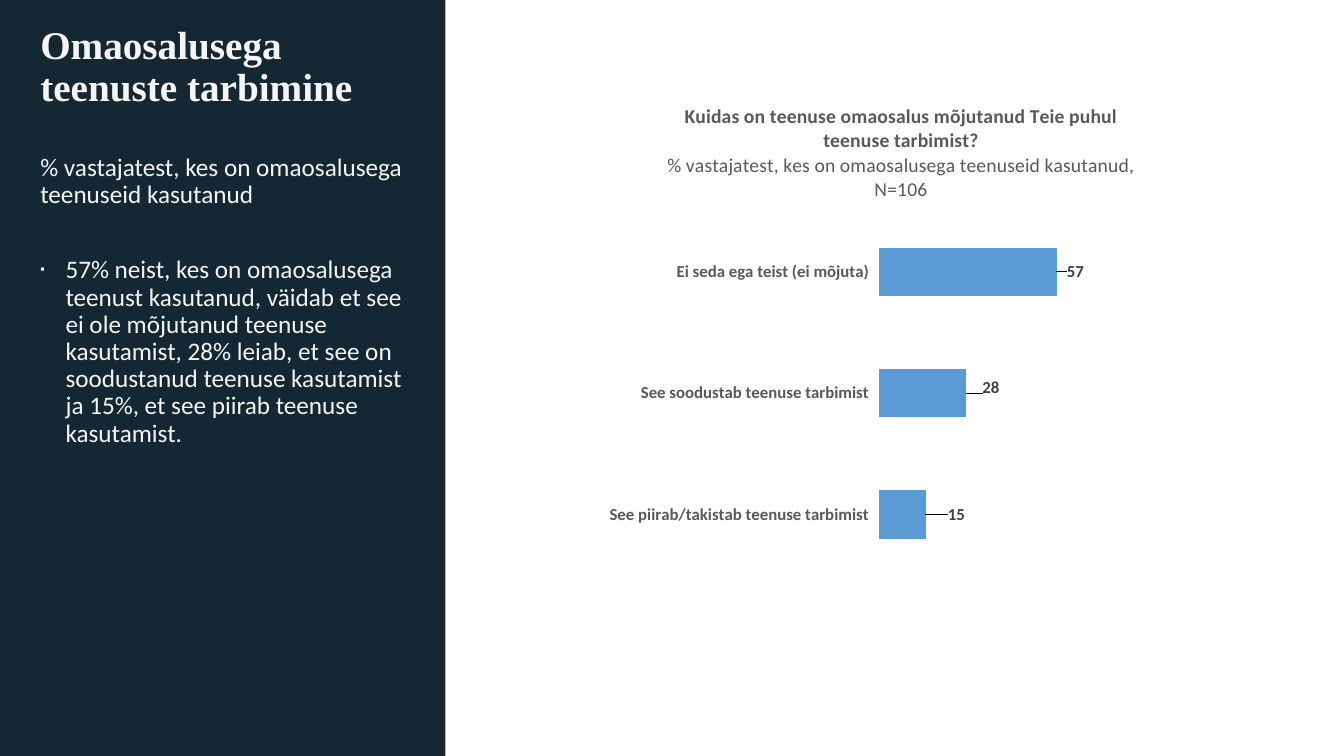
"""Build a slide on co-paid service use, with a text panel and a bar chart."""
import dataclasses
import typing

import lxml.etree
import pptx
import pptx.chart.chart
import pptx.chart.data
import pptx.dml.color
import pptx.enum.chart
import pptx.enum.shapes
import pptx.enum.text
import pptx.oxml
import pptx.oxml.ns
import pptx.slide
import pptx.util

Pt = pptx.util.Pt
Anchor = pptx.enum.text.MSO_ANCHOR
qn = pptx.oxml.ns.qn
CHART_WIDTH, CHART_HEIGHT = 432, 361.44


@dataclasses.dataclass(frozen=True)
class Theme:
    panel: str = "061A26"
    panel_alpha: int = 94
    panel_text: str = "F5F5F5"
    bar: str = "5B9BD5"
    axis_text: str = "595959"
    label_text: str = "404040"
    base_text: str = "000000"
    background: str = "FFFFFF"
    heading_font: str = "Times New Roman"
    body_font: str = "Calibri"
    heading_size: int = 28
    body_size: int = 18
    chart_title_size: int = 14
    label_size: int = 12
    base_size: int = 10


THEME = Theme()


@dataclasses.dataclass(frozen=True)
class TextBlock:
    text: str
    top: float
    height: float
    anchor: Anchor
    font: str = THEME.body_font
    size: int = THEME.body_size
    bold: bool = False
    space_before: int = 10
    bullet: str = ""


@dataclasses.dataclass(frozen=True)
class Answer:
    category: str
    percent: int
    label_shift: tuple[float, float]


BLOCKS = (
    TextBlock("Omaosalusega teenuste tarbimine", 14.4, 67.68, Anchor.MIDDLE,
              THEME.heading_font, THEME.heading_size, True, 0),
    TextBlock("% vastajatest, kes on omaosalusega teenuseid kasutanud",
              97.2, 65.5, Anchor.MIDDLE),
    TextBlock("57% neist, kes on omaosalusega teenust kasutanud, väidab et see "
              "ei ole mõjutanud teenuse kasutamist, 28% leiab, et see on "
              "soodustanud teenuse kasutamist ja 15%, et see piirab teenuse "
              "kasutamist.", 180, 321.1, Anchor.TOP, bullet="▪"),
)
ANSWERS = (
    Answer("See piirab/takistab teenuse tarbimist", 15, (0.03, 0)),
    Answer("See soodustab teenuse tarbimist", 28, (0.02, -0.01)),
    Answer("Ei seda ega teist (ei mõjuta)", 57, (0.01, 0)),
)
CHART_TITLE = (
    ("Kuidas on teenuse omaosalus mõjutanud Teie puhul teenuse tarbimist?", True),
    ("% vastajatest, kes on omaosalusega teenuseid kasutanud, N=106", False),
)


def style_font(font: typing.Any, name: str, size: int, color: str, bold: bool) -> None:
    """Apply typeface, size, colour and weight."""
    font.name, font.size, font.bold = name, Pt(size), bold
    font.color.rgb = pptx.dml.color.RGBColor.from_string(color)


def paint(fill: typing.Any, color: str) -> None:
    """Apply a solid fill."""
    fill.solid()
    fill.fore_color.rgb = pptx.dml.color.RGBColor.from_string(color)


def chart_layout(**values: typing.Any) -> typing.Any:
    """Return a manual chart layout element."""
    layout = lxml.etree.Element(qn("c:layout"))
    manual = lxml.etree.SubElement(layout, qn("c:manualLayout"))
    for tag, value in values.items():
        lxml.etree.SubElement(manual, qn(f"c:{tag}")).set("val", str(value))
    return layout


def add_panel(slide: pptx.slide.Slide) -> None:
    """Put the dark panel behind the text."""
    panel = slide.shapes.add_shape(
        pptx.enum.shapes.MSO_SHAPE.RECTANGLE, 0, 0, Pt(318.24), Pt(540))
    panel.shadow.inherit = False
    panel.line.fill.background()
    paint(panel.fill, THEME.panel)
    color = panel.element.spPr.find(".//" + qn("a:srgbClr"))
    lxml.etree.SubElement(color, qn("a:alpha")).set("val", str(THEME.panel_alpha * 1000))
    panel.element.getparent().insert(2, panel.element)


def fill_placeholder(box: typing.Any, block: TextBlock) -> None:
    """Place a placeholder and write its text."""
    box.left, box.top = Pt(21.6), Pt(block.top)
    box.width, box.height = Pt(275.04), Pt(block.height)
    frame = box.text_frame
    frame.text = block.text
    frame.word_wrap = True
    frame.auto_size = pptx.enum.text.MSO_AUTO_SIZE.NONE
    frame.vertical_anchor = block.anchor
    para = frame.paragraphs[0]
    para.alignment = pptx.enum.text.PP_ALIGN.LEFT
    para.line_spacing = 0.9
    para.space_before = Pt(block.space_before)
    indent = Pt(18) if block.bullet else 0
    properties = para._p.get_or_add_pPr()
    properties.set("marL", str(indent))
    properties.set("indent", str(-indent))
    if block.bullet:
        lxml.etree.SubElement(properties, qn("a:buSzPct")).set("val", "50000")
        lxml.etree.SubElement(properties, qn("a:buChar")).set("char", block.bullet)
    else:
        lxml.etree.SubElement(properties, qn("a:buNone"))
    style_font(para.font, block.font, block.size, THEME.panel_text, block.bold)


def add_title(chart: pptx.chart.chart.Chart) -> None:
    """Write the two-part chart title."""
    title = chart.chart_title
    frame = title.text_frame
    for index, (text, bold) in enumerate(CHART_TITLE):
        para = frame.add_paragraph() if index else frame.paragraphs[0]
        para.add_run().text = text
        style_font(para.font, THEME.body_font, THEME.chart_title_size,
                   THEME.axis_text, bold)
    element = chart.element.find(".//" + qn("c:title"))
    for old in element.findall(qn("c:layout")):
        element.remove(old)
    element.find(qn("c:tx")).addnext(
        chart_layout(xMode="edge", yMode="edge", x=0.11, y=0.04))


def format_axes(chart: pptx.chart.chart.Chart) -> None:
    """Show category names only, on a scale of 0 to 100."""
    categories, values = chart.category_axis, chart.value_axis
    categories.format.line.fill.background()
    categories.has_major_gridlines = False
    style_font(categories.tick_labels.font, THEME.body_font, THEME.label_size,
               THEME.axis_text, True)
    values.minimum_scale, values.maximum_scale = 0, 100
    values.has_major_gridlines = False
    values.visible = False


def add_answer_chart(slide: pptx.slide.Slide) -> None:
    """Add the bar chart of answers."""
    data = pptx.chart.data.CategoryChartData(number_format="0")
    data.categories = [answer.category for answer in ANSWERS]
    data.add_series("Series 1", [answer.percent for answer in ANSWERS])
    chart = slide.shapes.add_chart(
        pptx.enum.chart.XL_CHART_TYPE.BAR_CLUSTERED,
        Pt(426.96), Pt(56.88), Pt(CHART_WIDTH), Pt(CHART_HEIGHT), data).chart
    style_font(chart.font, THEME.body_font, THEME.base_size, THEME.base_text, False)
    chart.has_legend = False
    add_title(chart)
    format_axes(chart)
    plot = chart.plots[0]
    plot.gap_width = 150
    plot.vary_by_categories = False
    series = plot.series[0]
    paint(series.format.fill, THEME.bar)
    for index, answer in enumerate(ANSWERS):
        label = series.points[index].data_label
        style_font(label.font, THEME.body_font, THEME.label_size, THEME.label_text, True)
        label.position = pptx.enum.chart.XL_LABEL_POSITION.OUTSIDE_END
    series.data_labels.show_value = True
    for answer, element in zip(ANSWERS, chart.element.iter(qn("c:dLbl"))):
        shift_x, shift_y = answer.label_shift
        element.insert(1, chart_layout(x=shift_x, y=shift_y))
    area = chart.element.find(".//" + qn("c:plotArea"))
    for old in area.findall(qn("c:layout")):
        area.remove(old)
    area.insert(0, chart_layout(
        layoutTarget="inner", xMode="edge", yMode="edge",
        x=201 / CHART_WIDTH, y=94 / CHART_HEIGHT,
        w=223 / CHART_WIDTH, h=260 / CHART_HEIGHT))
    chart.element.find(qn("c:chart")).addnext(pptx.oxml.parse_xml(
        f'<c:spPr {pptx.oxml.ns.nsdecls("c", "a")}><a:solidFill><a:srgbClr '
        f'val="{THEME.background}"/></a:solidFill><a:ln><a:noFill/></a:ln></c:spPr>'))


def main() -> None:
    """Build and save the deck."""
    deck = pptx.Presentation()
    deck.slide_width, deck.slide_height = Pt(960), Pt(540)
    page = deck.slides.add_slide(deck.slide_layouts.get_by_name("Two Content"))
    for box, block in zip(page.placeholders, BLOCKS):
        fill_placeholder(box, block)
    add_panel(page)
    add_answer_chart(page)
    deck.save("out.pptx")


if __name__ == "__main__":
    main()
